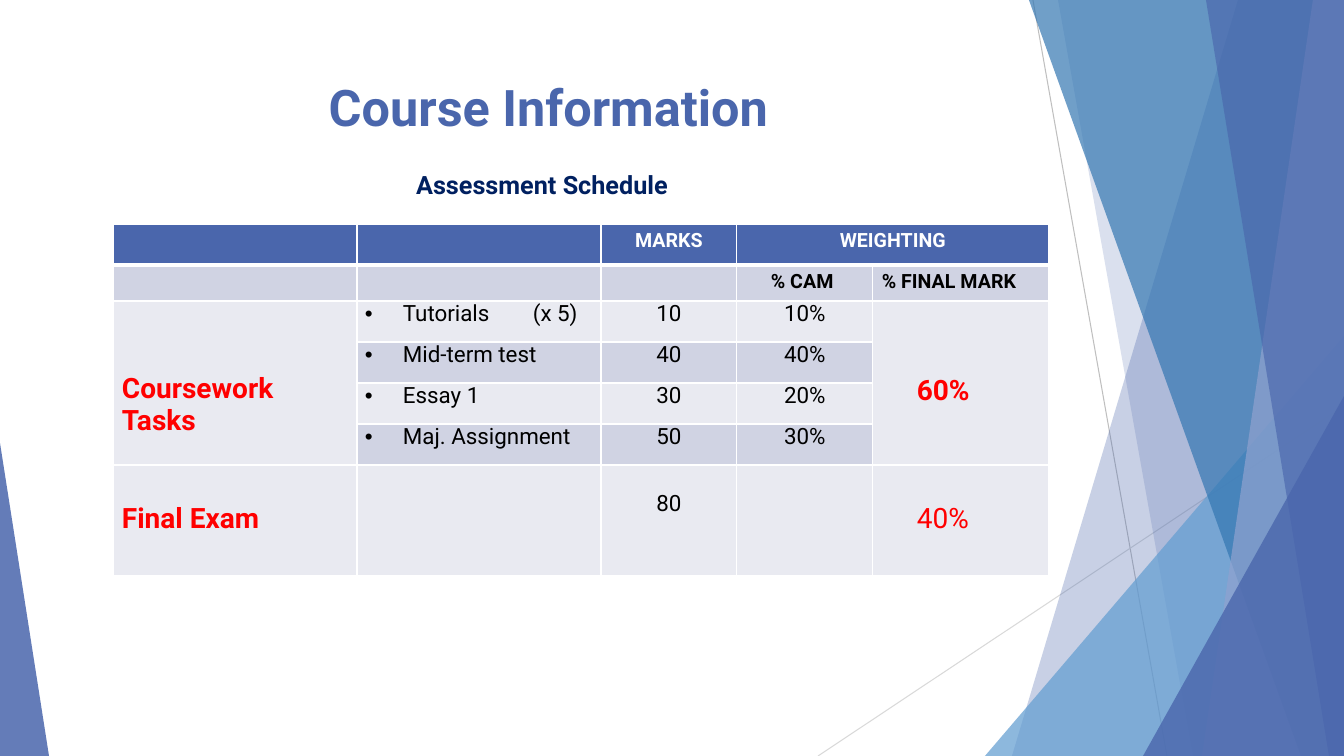
from pptx import Presentation
from pptx.dml.color import RGBColor
from pptx.enum.shapes import MSO_CONNECTOR as Link, MSO_SHAPE as Form
from pptx.enum.text import MSO_ANCHOR as Anchor, MSO_AUTO_SIZE as Fit, PP_ALIGN as Align
from pptx.oxml.ns import qn
from pptx.util import Pt
from lxml.etree import SubElement as sub

SCALE = 12192000 / 1344
WIDE, HIGH = 1344, 756
FONT = "Roboto"
BLUE, NAVY, RED = "4A66AC", "002060", "FF0000"
WHITE, BLACK = "FFFFFF", "000000"
DARK, PALE = "D0D3E3", "E9EAF1"
TASKS = [("Tutorials\t(x 5)", "10", "10%"), ("Mid-term test", "40", "40%"),
         ("Essay 1", "30", "20%"), ("Maj. Assignment", "50", "30%")]


def px(size):
    """Turn px into EMU."""
    return round(size * SCALE)


def color(code):
    """Turn a hex string into a colour."""
    return RGBColor.from_string(code)


def paint(shape, code, alpha):
    """Give a shape a flat, see-through fill with no outline or shadow."""
    shape.shadow.inherit = False
    shape.fill.solid()
    shape.fill.fore_color.rgb = color(code)
    shape.line.fill.background()
    tint = shape.fill._xPr.find(".//" + qn("a:srgbClr"))
    sub(tint, qn("a:alpha"), val=str(alpha * 1000))


def band(slide, top, low, code, alpha):
    """Draw a slanted band that reaches the right edge."""
    path = slide.shapes.build_freeform(top, 0, scale=SCALE)
    path.add_line_segments([(WIDE, 0), (WIDE, HIGH), (low, HIGH)])
    paint(path.convert_to_shape(), code, alpha)


def wedge(slide, left, top, wide, tip, code, alpha):
    """Draw a triangle that stands on the bottom edge."""
    shape = slide.shapes.add_shape(
        Form.ISOSCELES_TRIANGLE, px(left), px(top), px(wide), px(HIGH - top))
    shape.adjustments[0] = tip
    paint(shape, code, alpha)


def rule(slide, start, end, code):
    """Draw a thin straight line."""
    ends = [px(size) for size in start + end]
    line = slide.shapes.add_connector(Link.STRAIGHT, *ends)
    line.line.color.rgb = color(code)
    line.line.width = Pt(0.75)
    sub(line._element.spPr, qn("a:effectLst"))


def write(frame, text, size, code, bold=True, align=Align.CENTER):
    """Set and format the text of a frame."""
    frame.text = text
    for para in frame.paragraphs:
        para.alignment = align
        for run in para.runs:
            font = run.font
            font.name, font.size, font.bold = FONT, Pt(size), bold
            font.color.rgb = color(code)


def pad(cell, left=9, top=5, right=9, low=5):
    """Set the margins of a cell."""
    cell.margin_left, cell.margin_top = px(left), px(top)
    cell.margin_right, cell.margin_bottom = px(right), px(low)


def edge(cell, low):
    """Give a cell white borders with a bottom one of the given points."""
    props = cell._tc.get_or_add_tcPr()
    for spot, (tag, wide) in enumerate(
            [("a:lnL", 1), ("a:lnR", 1), ("a:lnT", 1), ("a:lnB", low)]):
        line = props.makeelement(qn(tag), {"w": str(Pt(wide))})
        sub(sub(line, qn("a:solidFill")), qn("a:srgbClr"), val=WHITE)
        props.insert(spot, line)


def bullet(cell):
    """Turn the text of a cell into a bullet item with a tab stop."""
    props = cell.text_frame.paragraphs[0]._p.get_or_add_pPr()
    props.set("marL", str(px(38)))
    props.set("indent", str(-px(38)))
    sub(props, qn("a:buFont"), typeface="Arial")
    sub(props, qn("a:buChar"), char="•")
    tabs = sub(props, qn("a:tabLst"))
    sub(tabs, qn("a:tab"), pos=str(px(168)), algn="l")


def grid(slide, cols, rows):
    """Add the empty table with its fills and borders."""
    table = slide.shapes.add_table(
        len(rows), len(cols), px(113), px(224), px(sum(cols)), px(sum(rows))).table
    table.horz_banding = False
    for col, wide in zip(table.columns, cols):
        col.width = px(wide)
    for num, (row, high) in enumerate(zip(table.rows, rows)):
        row.height = px(high)
        for cell in row.cells:
            pad(cell, top=0, low=0)
            cell.fill.solid()
            shade = DARK if num % 2 else PALE
            cell.fill.fore_color.rgb = color(shade if num else BLUE)
            edge(cell, 1 if num else 3)
    return table


def label(cell, text, size, code, left=9, top=5, bold=True, align=Align.LEFT):
    """Place text in a cell by its margins."""
    pad(cell, left, top)
    write(cell.text_frame, text, size, code, bold, align)


def marks(slide):
    """Fill in the assessment table."""
    table = grid(slide, [244, 244, 136, 136, 176], [41, 36] + [41] * 4 + [111])
    cell = table.cell
    cell(0, 3).merge(cell(0, 4))
    for col in (0, 4):
        cell(2, col).merge(cell(5, col))
    label(cell(0, 2), "MARKS", 14, WHITE, align=Align.CENTER)
    label(cell(0, 3), "WEIGHTING", 14, WHITE, align=Align.CENTER)
    label(cell(1, 3), "% CAM", 14, BLACK, left=34)
    label(cell(1, 4), "% FINAL MARK", 14, BLACK)
    label(cell(2, 0), "Coursework\nTasks", 20, RED, top=71)
    label(cell(2, 4), "60%", 20, RED, left=44, top=74)
    for row, task in enumerate(TASKS, 2):
        for col, text in enumerate(task, 1):
            spot = cell(row, col)
            pad(spot, 8, 0, 8, 0)
            align = Align.LEFT if col == 1 else Align.CENTER
            write(spot.text_frame, text, 16, BLACK, False, align)
        bullet(cell(row, 1))
    label(cell(6, 0), "Final Exam", 20, RED, top=38)
    label(cell(6, 2), "80", 16, BLACK, top=26, bold=False, align=Align.CENTER)
    label(cell(6, 4), "40%", 20, RED, left=44, top=38, bold=False)


def decor(slide):
    """Draw the lines, bands and wedges at the edges."""
    rule(slide, (1033, 0), (1167, HIGH), "BFBFBF")
    rule(slide, (WIDE, 406), (818, HIGH), "D9D9D9")
    band(slide, 1238, 1012, BLUE, 30)
    band(slide, 1058, 1193, BLUE, 20)
    wedge(slide, 985, 336, 359, 1, "629DD1", 72)
    band(slide, 1029, 1301, "3477B2", 70)
    band(slide, 1313, 1202, "90A2CF", 70)
    band(slide, 1206, 1329, BLUE, 65)
    wedge(slide, 1143, 396, 201, 1, BLUE, 80)
    wedge(slide, 0, 443, 49, 0, BLUE, 85)


def heads(slide):
    """Set the title and the line below it."""
    title = slide.shapes.title
    title.left, title.top, title.width, title.height = map(px, (75, 67, 947, 87))
    frame = title.text_frame
    frame.auto_size = Fit.NONE
    frame.vertical_anchor = Anchor.TOP
    frame.margin_top = px(9)
    write(frame, "Course Information", 36, BLUE)
    box = slide.shapes.add_textbox(*map(px, (317, 164, 450, 40)))
    box.text_frame.word_wrap = True
    write(box.text_frame, "Assessment Schedule", 18, NAVY)


def main():
    """Build the slide and save it."""
    deck = Presentation()
    deck.slide_width, deck.slide_height = px(WIDE), px(HIGH)
    slide = deck.slides.add_slide(deck.slide_layouts[5])
    decor(slide)
    heads(slide)
    marks(slide)
    deck.save("out.pptx")


if __name__ == "__main__":
    main()
